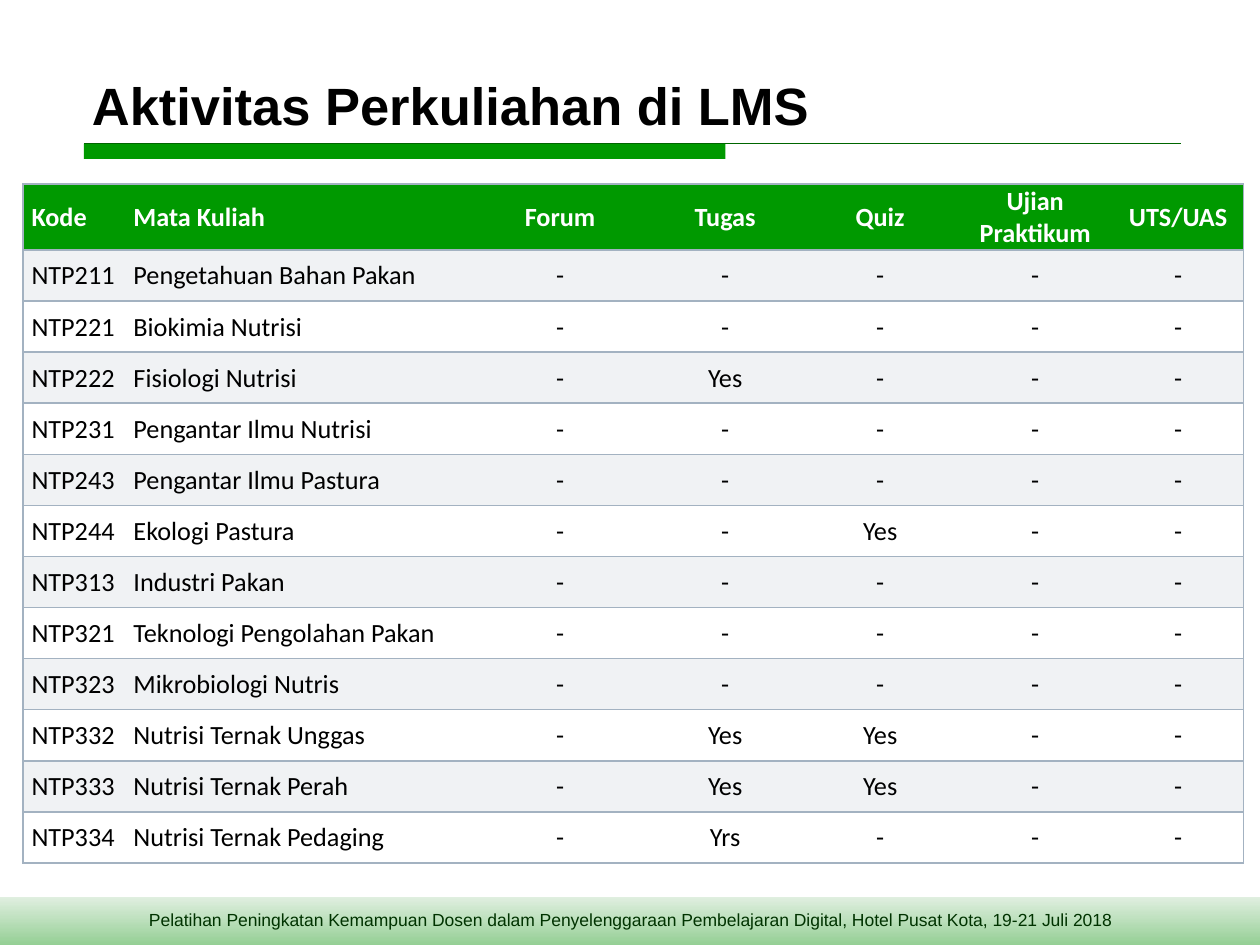
from lxml.etree import SubElement as Sub
from pptx import Presentation
from pptx.dml.color import RGBColor as RGB
from pptx.enum.shapes import MSO_CONNECTOR as CONN, MSO_SHAPE as SHAPE
from pptx.enum.text import MSO_ANCHOR as ANCHOR, PP_ALIGN as ALIGN
from pptx.oxml.ns import qn
from pptx.util import Pt

HUES = {
    "green": "009900", "rule": "006600", "edge": "A3B2C1", "band": "F0F2F4",
    "white": "FFFFFF", "black": "000000", "foot": "003300",
    "pale": "E0EFE0", "leaf": "95CF95",
}
HEAD = ["Kode", "Mata Kuliah", "Forum", "Tugas", "Quiz", "Ujian Praktikum", "UTS/UAS"]
ROWS = [
    ("NTP211", "Pengetahuan Bahan Pakan", "- - - - -"),
    ("NTP221", "Biokimia Nutrisi", "- - - - -"),
    ("NTP222", "Fisiologi Nutrisi", "- Yes - - -"),
    ("NTP231", "Pengantar Ilmu Nutrisi", "- - - - -"),
    ("NTP243", "Pengantar Ilmu Pastura", "- - - - -"),
    ("NTP244", "Ekologi Pastura", "- - Yes - -"),
    ("NTP313", "Industri Pakan", "- - - - -"),
    ("NTP321", "Teknologi Pengolahan Pakan", "- - - - -"),
    ("NTP323", "Mikrobiologi Nutris", "- - - - -"),
    ("NTP332", "Nutrisi Ternak Unggas", "- Yes Yes - -"),
    ("NTP333", "Nutrisi Ternak Perah", "- Yes Yes - -"),
    ("NTP334", "Nutrisi Ternak Pedaging", "- Yrs - - -"),
]
WIDTHS = [62.6, 194.4, 100.1, 88.6, 88.6, 88.6, 74.8]
TOP_H, ROW_H = 37.7, 29.2


def write(frame, text, size, hue, font="Arial", bold=False, align=ALIGN.LEFT):
    para = frame.paragraphs[0]
    para.alignment = align
    run = para.add_run()
    run.text = text
    run.font.name, run.font.size, run.font.bold = font, Pt(size), bold
    run.font.color.rgb = RGB.from_string(HUES[hue])


def edge(cell, side, shown):
    """Draw one cell border, or clear it when shown is False."""
    line = Sub(cell._tc.get_or_add_tcPr(), qn("a:ln" + side), w=str(Pt(1)))
    if shown:
        fill = Sub(line, qn("a:solidFill"))
        Sub(fill, qn("a:srgbClr"), val=HUES["edge"])
    else:
        Sub(line, qn("a:noFill"))


prs = Presentation()
prs.slide_width, prs.slide_height = Pt(720), Pt(540)
slide = prs.slides.add_slide(prs.slide_layouts[6])
shapes = slide.shapes

# Title rule: thick bar under a thin line
bar = shapes.add_shape(SHAPE.RECTANGLE, Pt(48), Pt(82.2), Pt(366.5), Pt(8.6))
bar.shadow.inherit = False
bar.fill.solid()
bar.fill.fore_color.rgb = RGB.from_string(HUES["green"])
bar.line.fill.background()
rule = shapes.add_connector(CONN.STRAIGHT, Pt(48), Pt(82.2), Pt(674.8), Pt(82.2))
rule.line.color.rgb = RGB.from_string(HUES["rule"])
rule.line.width = Pt(0.75)
Sub(rule._element.spPr, qn("a:effectLst"))

# Footer band
band = shapes.add_shape(SHAPE.RECTANGLE, Pt(0), Pt(512.5), Pt(720), Pt(27.5))
band.shadow.inherit = False
band.fill.gradient()
band.fill.gradient_angle = 270
for stop, hue, at in zip(band.fill.gradient_stops, ("pale", "leaf"), (0, 1)):
    stop.color.rgb = RGB.from_string(HUES[hue])
    stop.position = at
band.line.fill.background()

foot = shapes.add_textbox(Pt(13), Pt(516.2), Pt(694), Pt(19.4)).text_frame
foot.word_wrap = True
write(foot, "Pelatihan Peningkatan Kemampuan Dosen dalam Penyelenggaraan Pembelajaran "
      "Digital, Hotel Pusat Kota, 19-21 Juli 2018", 10, "foot", align=ALIGN.CENTER)

title = shapes.add_textbox(Pt(45.4), Pt(23.8), Pt(630), Pt(57.6)).text_frame
title.word_wrap = True
title.vertical_anchor = ANCHOR.BOTTOM
write(title, "Aktivitas Perkuliahan di LMS", 30, "black", bold=True)

# Course table
grid = [HEAD] + [[code, name, *marks.split()] for code, name, marks in ROWS]
table = shapes.add_table(len(grid), len(HEAD), Pt(13), Pt(105.1), Pt(sum(WIDTHS)),
                         Pt(TOP_H + ROW_H * len(ROWS))).table
for col, width in zip(table.columns, WIDTHS):
    col.width = Pt(width)
last = len(HEAD) - 1
for r, line in enumerate(grid):
    table.rows[r].height = Pt(ROW_H if r else TOP_H)
    back = "green" if r == 0 else "band" if r % 2 else "white"
    for c, text in enumerate(line):
        cell = table.cell(r, c)
        cell.margin_left = Pt(0.7 if c else 5)
        cell.margin_right = cell.margin_top = Pt(0.7)
        cell.margin_bottom = Pt(0)
        cell.vertical_anchor = ANCHOR.MIDDLE
        for side, shown in (("L", c == 0), ("R", c == last), ("T", True), ("B", True)):
            edge(cell, side, shown)
        cell.fill.solid()
        cell.fill.fore_color.rgb = RGB.from_string(HUES[back])
        write(cell.text_frame, text, 15, "black" if r else "white", font="Calibri",
              bold=r == 0, align=ALIGN.CENTER if c > 1 else ALIGN.LEFT)

prs.save("out.pptx")
